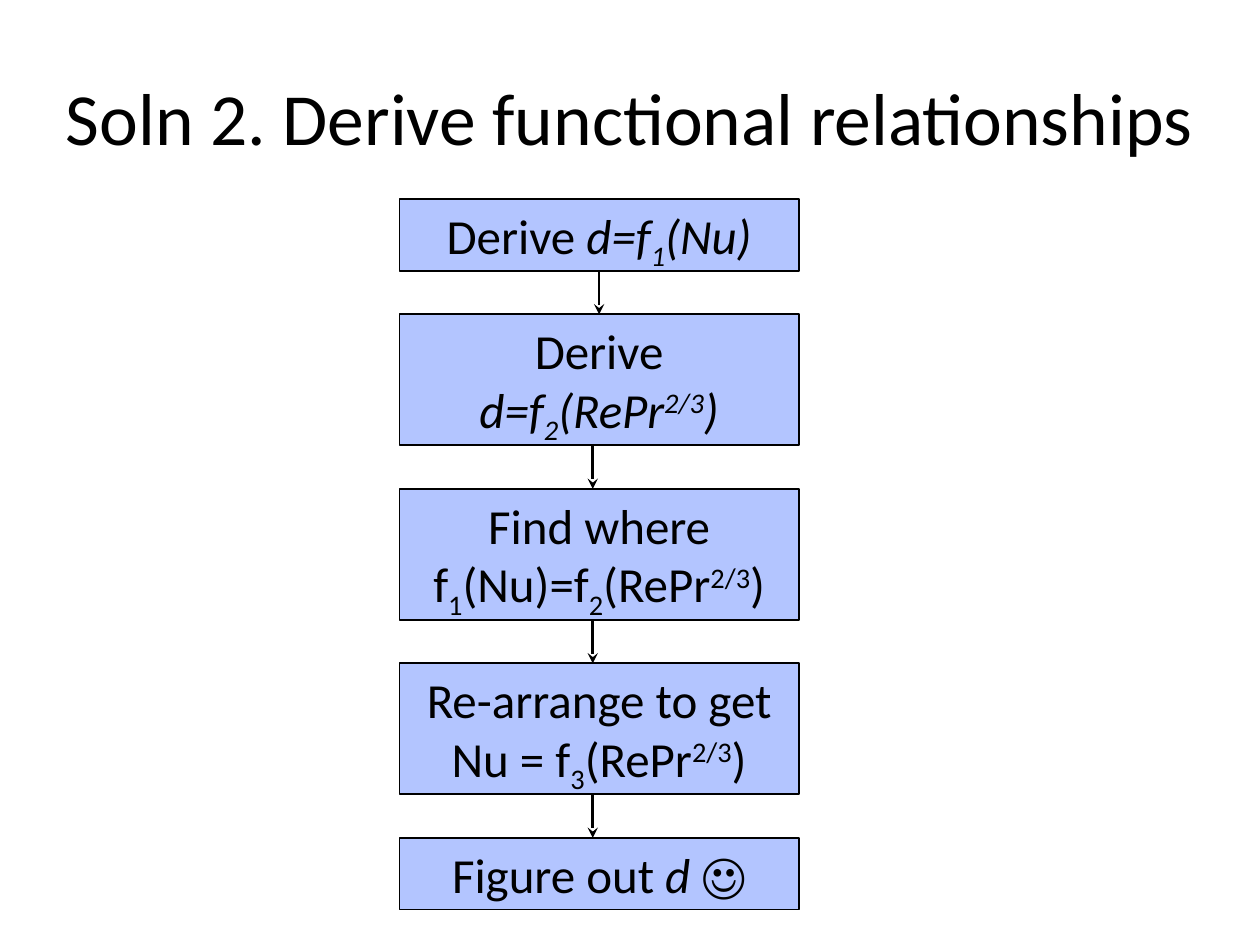
from collections import namedtuple
from dataclasses import dataclass

from pptx import Presentation
from pptx.dml.color import RGBColor
from pptx.enum.shapes import MSO_CONNECTOR as Connector, MSO_SHAPE as Shape
from pptx.enum.text import MSO_ANCHOR as Anchor, MSO_AUTO_SIZE as AutoSize, PP_ALIGN as Align
from pptx.oxml.ns import qn
from pptx.util import Inches, Pt
from lxml.etree import SubElement

Box = namedtuple("Box", "left top width height")
Step = namedtuple("Step", "lines spans")


@dataclass(frozen=True)
class Theme:
    font: str = "Calibri"
    ink: RGBColor = RGBColor(0x00, 0x00, 0x00)
    fill: RGBColor = RGBColor(0xB3, 0xC5, 0xFF)
    title_size: int = 42
    step_size: int = 28
    outline: float = 1
    arrow: float = 1.5


THEME = Theme()
SLIDE = Box(0, 0, 10, 7.5)
TITLE = Box(0.33, 0.3, 9.33, 1.25)
FLOW = Box(3.17, 1.58, 3.17, 5.64)
STEP_HEIGHT = {1: 0.57, 2: 1.04}  # by number of text lines
ARROW_SHIFT = 0.05  # the lower arrows stand left of the centre

# Span styles: i italic, _ subscript, ^ superscript
BASELINE = {"_": -25000, "^": 30000}
STEPS = [
    Step(1, [("Derive ", ""), ("d=f", "i"), ("1", "i_"), ("(Nu)", "i")]),
    Step(2, [("Derive ", ""), ("d=f", "i"), ("2", "i_"), ("(RePr", "i"),
             ("2/3", "i^"), (")", "i")]),
    Step(2, [("Find where f", ""), ("1", "_"), ("(Nu)=f", ""), ("2", "_"),
             ("(RePr", ""), ("2/3", "^"), (")", "")]),
    Step(2, [("Re-arrange to get Nu = f", ""), ("3", "_"), ("(RePr", ""),
             ("2/3", "^"), (")", "")]),
    Step(1, [("Figure out ", ""), ("d ", "i"), ("☺", "")]),
]


def inches(*lengths):
    return [Inches(length) for length in lengths]


def add_spans(para, spans, size):
    para.alignment = Align.CENTER
    for text, style in spans:
        span = para.add_run()
        span.text = text
        font = span.font
        font.name, font.size, font.italic = THEME.font, Pt(size), "i" in style
        font.color.rgb = THEME.ink
        for mark, shift in BASELINE.items():
            if mark in style:
                font._element.set("baseline", str(shift))


def place_title(page, box, text):
    title = page.shapes.title
    title.left, title.top, title.width, title.height = inches(*box)
    frame = title.text_frame
    frame.word_wrap = True
    frame.vertical_anchor = Anchor.MIDDLE
    add_spans(frame.paragraphs[0], [(text, "")], THEME.title_size)


def add_step(page, box, spans):
    rect = page.shapes.add_shape(Shape.RECTANGLE, *inches(*box))
    rect.shadow.inherit = False
    rect.fill.solid()
    rect.fill.fore_color.rgb = THEME.fill
    rect.line.color.rgb = THEME.ink
    rect.line.width = Pt(THEME.outline)
    frame = rect.text_frame
    frame.word_wrap = True
    frame.auto_size = AutoSize.SHAPE_TO_FIT_TEXT
    frame.vertical_anchor = Anchor.TOP
    add_spans(frame.paragraphs[0], spans, THEME.step_size)
    return rect


def add_arrow(page, x, top, bottom):
    arrow = page.shapes.add_connector(Connector.STRAIGHT, *inches(x, top, x, bottom))
    arrow.line.color.rgb = THEME.ink
    arrow.line.width = Pt(THEME.arrow)
    SubElement(arrow.line._get_or_add_ln(), qn("a:tailEnd"), type="stealth")
    SubElement(arrow._element.spPr, qn("a:effectLst"))
    return arrow


def build_flow(page, box, steps):
    """Stack the steps over the height of the box, with equal gaps."""
    heights = [STEP_HEIGHT[step.lines] for step in steps]
    gap = (box.height - sum(heights)) / (len(steps) - 1)
    centre = box.left + box.width / 2
    top, previous = box.top, None
    for index, (step, height) in enumerate(zip(steps, heights)):
        rect = add_step(page, Box(box.left, top, box.width, height), step.spans)
        if index == 1:  # the centred arrow joins its two boxes
            arrow = add_arrow(page, centre, top - gap, top)
            arrow.begin_connect(previous, 2)
            arrow.end_connect(rect, 0)
        elif index > 1:
            add_arrow(page, centre - ARROW_SHIFT, top - gap, top)
        previous = rect
        top += height + gap


def main():
    deck = Presentation()
    deck.slide_width, deck.slide_height = inches(SLIDE.width, SLIDE.height)
    page = deck.slides.add_slide(deck.slide_layouts[5])
    place_title(page, TITLE, "Soln 2. Derive functional relationships")
    build_flow(page, FLOW, STEPS)
    deck.save("out.pptx")


if __name__ == "__main__":
    main()
